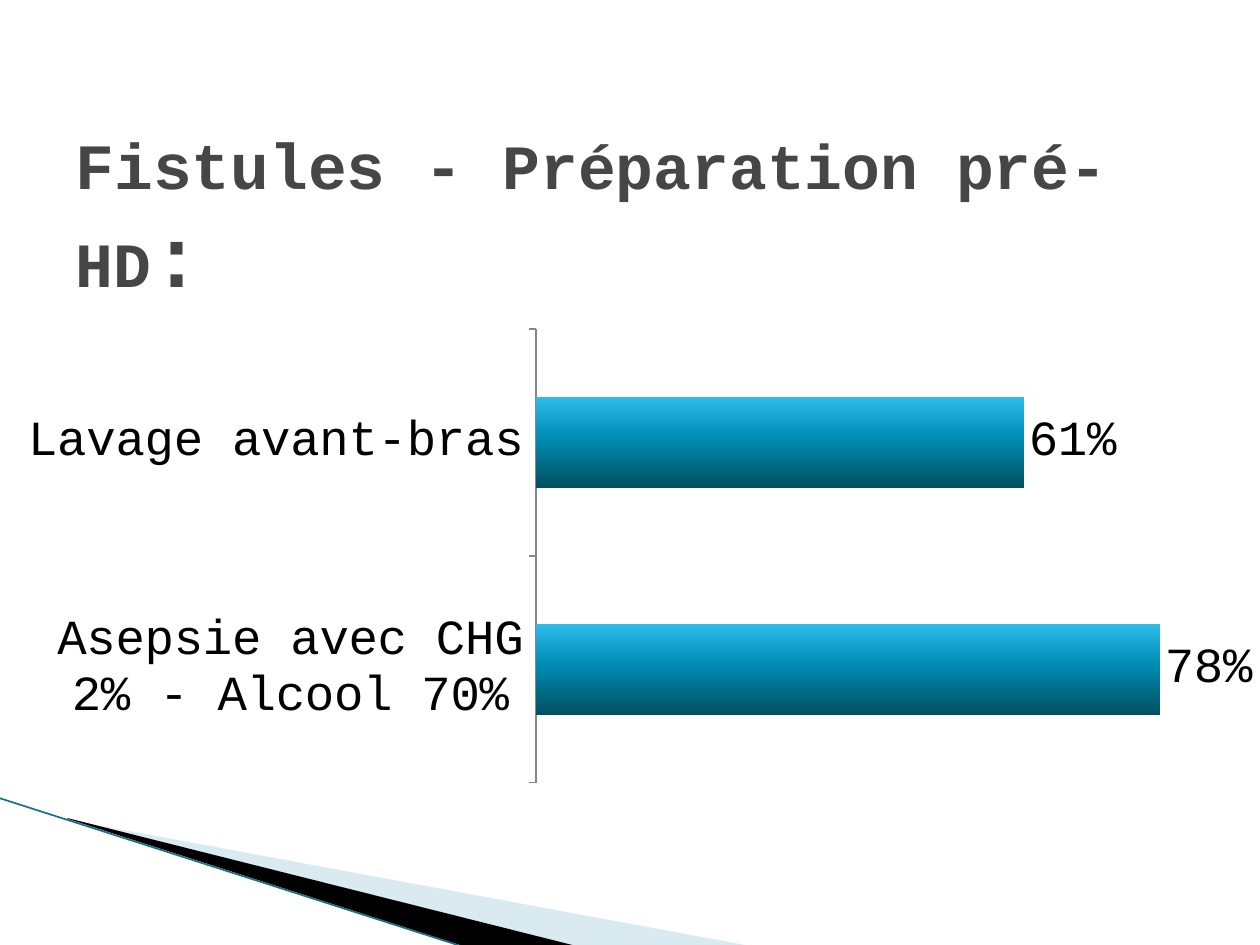
import copy

import pptx
import pptx.chart.data
import pptx.dml.color
import pptx.enum.chart
import pptx.enum.shapes
import pptx.enum.text
import pptx.oxml
import pptx.util
from lxml import etree

PX = 914400 / 126
FONT = "Courier New"
COLORS = {
    "title": "464646",
    "text": "000000",
    "axis": "868686",
    "bar_top": "2DBCE8",
    "bar_middle": "008CB4",
    "bar_bottom": "00505F",
    "pale": "A0CBDC",
    "dark": "000000",
    "edge": "1A7088",
}


def px(n):
    return pptx.util.Emu(round(n * PX))


def rgb(name):
    return pptx.dml.color.RGBColor.from_string(COLORS[name])


def set_font(font, size, color, bold=False):
    font.name = FONT
    font.size = pptx.util.Pt(size)
    font.bold = bold
    font.color.rgb = rgb(color)


def set_frame(sp, x, y, w, h):
    """Give a freeform its own frame; the outline stays where it is."""
    dx, dy = sp.left - px(x), sp.top - px(y)
    path = sp._element.find(".//" + pptx.oxml.ns.qn("a:path"))
    for pt in path.iter(pptx.oxml.ns.qn("a:pt")):
        pt.set("x", str(round(int(pt.get("x")) * PX) + dx))
        pt.set("y", str(round(int(pt.get("y")) * PX) + dy))
    sp.left, sp.top, sp.width, sp.height = px(x), px(y), px(w), px(h)
    path.set("w", str(sp.width))
    path.set("h", str(sp.height))


def add_wedge(s, x, y, points, frame, color, alpha=None):
    (x0, y0), *rest = points
    builder = s.shapes.build_freeform(x + x0, y + y0, scale=PX)
    builder.add_line_segments([(x + dx, y + dy) for dx, dy in rest], close=True)
    sp = builder.convert_to_shape()
    fx, fy, fw, fh = frame
    set_frame(sp, x + fx, y + fy, fw, fh)
    sp.shadow.inherit = False
    sp.fill.solid()
    sp.fill.fore_color.rgb = rgb(color)
    sp.line.fill.background()
    if alpha:
        clr = sp._element.spPr.find(".//" + pptx.oxml.ns.qn("a:srgbClr"))
        etree.SubElement(clr, pptx.oxml.ns.qn("a:alpha"), val=str(alpha * 1000))


def add_corner(s, x, y, w, h):
    """Sweeping wedges in the bottom left corner."""
    add_wedge(s, x, y, [(69, 22), (w, h - 2), (575, h - 2), (69, 21)],
              (98, -109, 524, 199), "pale", alpha=40)
    add_wedge(s, x, y, [(67, 20), (576, h - 2), (469, h), (68, 21)],
              (-8, 0, 524, 116), "dark")
    edge = s.shapes.add_connector(
        pptx.enum.shapes.MSO_CONNECTOR.STRAIGHT,
        px(x - 1), px(y), px(x + 467), px(y + h))
    edge.line.color.rgb = rgb("edge")
    edge.line.width = pptx.util.Pt(0.95)
    etree.SubElement(edge._element.spPr, pptx.oxml.ns.qn("a:effectLst"))


def add_title(s, x, y, w, h):
    title = s.shapes.title
    title.left, title.top, title.width, title.height = px(x), px(y), px(w), px(h)
    tf = title.text_frame
    tf.word_wrap = True
    tf.auto_size = pptx.enum.text.MSO_AUTO_SIZE.NONE
    tf.vertical_anchor = pptx.enum.text.MSO_ANCHOR.MIDDLE
    tf.margin_bottom = px(84)  # lifts the two lines above the chart
    p = tf.paragraphs[0]
    p.alignment = pptx.enum.text.PP_ALIGN.LEFT
    for text, size in [("Fistules - ", 36.9), ("Préparation pré-HD", 36), (":", 48.6)]:
        r = p.add_run()
        r.text = text
        set_font(r.font, size, "title", bold=True)


def set_plot_area(chart, x, y, w, h):
    """Fix the inner plot area, in fractions of the chart."""
    plot_area = chart._chartSpace.chart.plotArea
    for old in plot_area.findall(pptx.oxml.ns.qn("c:layout")):
        plot_area.remove(old)
    layout = etree.Element(pptx.oxml.ns.qn("c:layout"))
    manual = etree.SubElement(layout, pptx.oxml.ns.qn("c:manualLayout"))
    values = {"layoutTarget": "inner", "xMode": "edge", "yMode": "edge",
              "x": x, "y": y, "w": w, "h": h}
    for tag, val in values.items():
        etree.SubElement(manual, pptx.oxml.ns.qn("c:" + tag), val=str(val))
    plot_area.insert(0, layout)


def set_bar_gradient(series):
    fill = series.format.fill
    fill.gradient()
    fill.gradient_angle = 270
    stops = series._element.find(".//" + pptx.oxml.ns.qn("a:gsLst"))
    stops.insert(1, copy.deepcopy(stops[0]))
    names = ("bar_top", "bar_middle", "bar_bottom")
    for stop, position, name in zip(fill.gradient_stops, (0, 0.45, 1), names):
        stop.position = position
        stop.color.rgb = rgb(name)


def add_bar_chart(s, x, y, w, h):
    data = pptx.chart.data.CategoryChartData(number_format="0%")
    data.categories = ["Asepsie avec CHG 2% - Alcool 70%", "Lavage avant-bras"]
    data.add_series("Series 1", [0.78, 0.61])
    chart = s.shapes.add_chart(
        pptx.enum.chart.XL_CHART_TYPE.BAR_CLUSTERED,
        px(x), px(y), px(w), px(h), data).chart
    chart.has_legend = False
    chart.has_title = False
    set_font(chart.font, 18, "text")
    set_plot_area(chart, 540 / w, 28 / h, 720 / w, 454 / h)

    # Axes
    cat = chart.category_axis
    cat.major_tick_mark = pptx.enum.chart.XL_TICK_MARK.OUTSIDE
    cat.format.line.color.rgb = rgb("axis")
    cat.format.line.width = pptx.util.Pt(0.75)
    set_font(cat.tick_labels.font, 28, "text")
    val = chart.value_axis
    val.minimum_scale, val.maximum_scale = 0, 0.9
    val.has_major_gridlines = False
    val.visible = False

    # Bars and their labels
    plot = chart.plots[0]
    plot.gap_width = 150
    plot.vary_by_categories = False
    set_bar_gradient(plot.series[0])
    plot.has_data_labels = True
    labels = plot.data_labels
    labels.show_value = True
    labels.number_format = "0%"
    labels.number_format_is_linked = False
    labels.position = pptx.enum.chart.XL_LABEL_POSITION.OUTSIDE_END
    set_font(labels.font, 28, "text")


def main():
    prs = pptx.Presentation()
    prs.slide_width, prs.slide_height = px(1260), px(945)
    s = prs.slides.add_slide(prs.slide_layouts[5])
    add_corner(s, 0, 798, 750, 150)
    add_title(s, 63, 160, 1134, 188)
    add_bar_chart(s, -4, 301, 1260, 559)
    prs.save("out.pptx")


if __name__ == "__main__":
    main()
